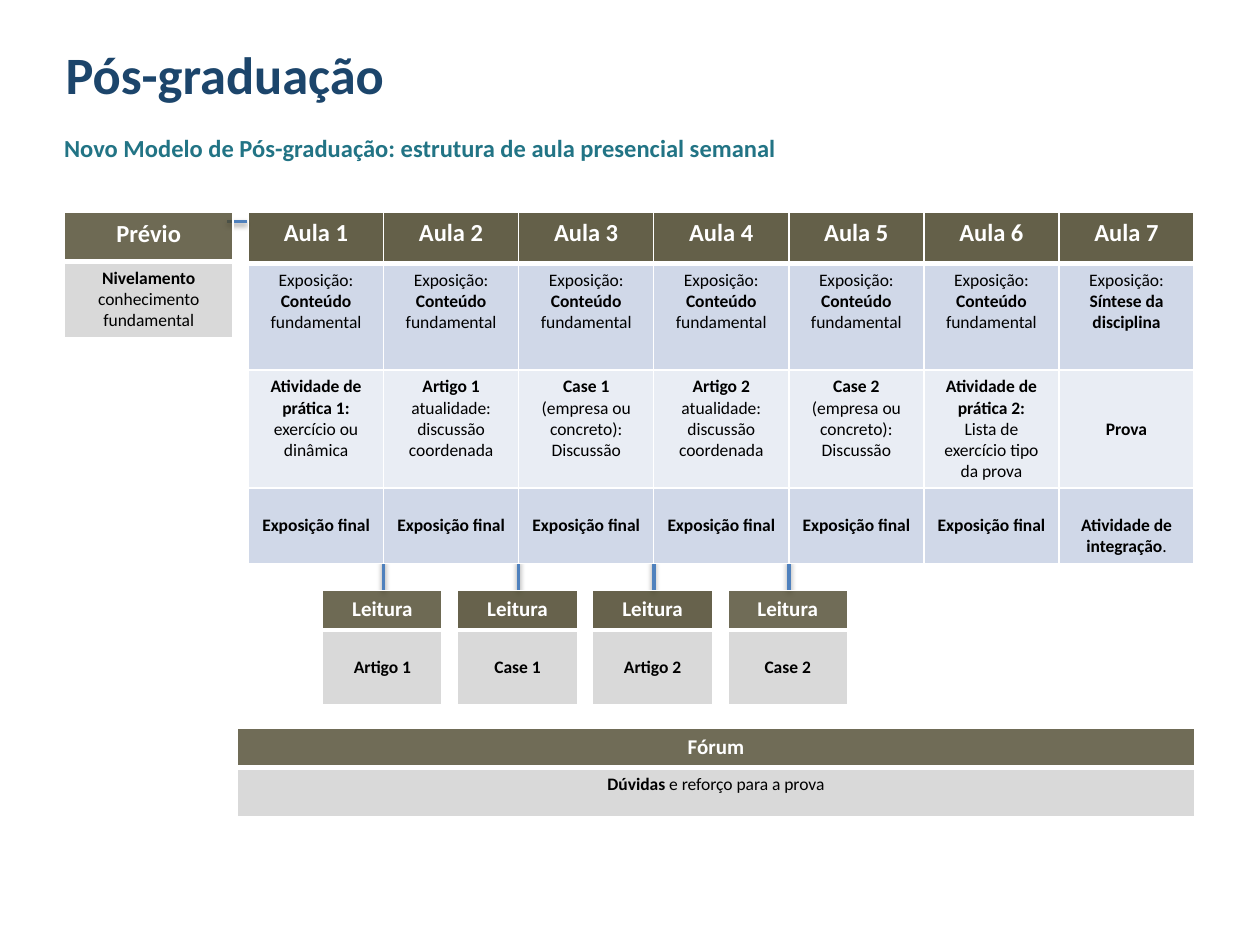
from lxml.etree import SubElement
from pptx import Presentation
from pptx.dml.color import RGBColor
from pptx.enum.shapes import MSO_CONNECTOR
from pptx.enum.text import MSO_ANCHOR, PP_ALIGN
from pptx.oxml import parse_xml
from pptx.oxml.ns import nsdecls, qn
from pptx.util import Pt

FONT = "Calibri"
OLIVE, GREY, WHITE, BLACK = "4A452A", "D9D9D9", "FFFFFF", "000000"
BLUE, PALE_BLUE, LINK_BLUE = "D0D8E8", "E9EDF4", "4F81BD"
TOP, MIDDLE, BOTTOM = MSO_ANCHOR.TOP, MSO_ANCHOR.MIDDLE, MSO_ANCHOR.BOTTOM


def paint(fill, colour):
    fill.solid()
    fill.fore_color.rgb = RGBColor.from_string(colour)


def add_grid(left, top, column_width, header_size, opacity, rows):
    """Add a table whose first row is the translucent header.

    Each row is (height, colour, anchor, cells); a cell's paragraphs are
    split by line breaks and its bold words stand between asterisks.
    """
    columns = len(rows[0][3])
    grid = slide.shapes.add_table(
        len(rows), columns, Pt(left), Pt(top),
        Pt(column_width * columns), Pt(sum(row[0] for row in rows))).table
    grid.first_row = grid.horz_banding = False
    for column in grid.columns:
        column.width = Pt(column_width)
    for r, (height, colour, anchor, texts) in enumerate(rows):
        grid.rows[r].height = Pt(height)
        for c, text in enumerate(texts):
            cell = grid.cell(r, c)
            cell.vertical_anchor = anchor
            paint(cell.fill, colour)
            properties = cell._tc.tcPr
            if r == 0:
                colour_node = properties.find(".//" + qn("a:srgbClr"))
                SubElement(colour_node, qn("a:alpha"), val=str(opacity * 1000))
            for position, side in enumerate("LRTB"):
                thick = (r, side) in ((0, "B"), (1, "T"))
                properties.insert(position, parse_xml(
                    f'<a:ln{side} {nsdecls("a")} w="{Pt(3 if thick else 1)}">'
                    f'<a:solidFill><a:srgbClr val="{WHITE}"/></a:solidFill></a:ln{side}>'))
            for p, line in enumerate(text.split("\n")):
                frame = cell.text_frame
                paragraph = frame.add_paragraph() if p else frame.paragraphs[0]
                paragraph.alignment = PP_ALIGN.CENTER
                paragraph.font.name = FONT
                paragraph.font.size = Pt(10 if r else header_size)
                paint(paragraph.font.fill, BLACK if r else WHITE)
                for part, words in enumerate(line.split("*")):
                    if words:
                        run = paragraph.add_run()
                        run.text = words
                        run.font.bold = r == 0 or part % 2 == 1
    return grid


prs = Presentation()
prs.slide_width, prs.slide_height = Pt(720), Pt(540)
slide = prs.slides.add_slide(prs.slide_layouts[5])

# Title and subtitle
title = slide.shapes.title
title.left, title.top, title.width, title.height = Pt(29.5), Pt(20), Pt(198), Pt(44)
subtitle = slide.shapes.add_textbox(Pt(29.5), Pt(72.5), Pt(652), Pt(26))
for box, text, size, colour, alignment, wrap in (
    (title, "Pós-graduação", 30, "1C456B", PP_ALIGN.CENTER, False),
    (subtitle, "Novo Modelo de Pós-graduação: estrutura de aula presencial semanal",
     14, "227485", PP_ALIGN.JUSTIFY, True),
):
    box.text_frame.text = text
    box.text_frame.word_wrap = wrap
    heading = box.text_frame.paragraphs[0]
    heading.alignment = alignment
    heading.font.name, heading.font.size, heading.font.bold = FONT, Pt(size), True
    paint(heading.font.fill, colour)
title.text_frame.vertical_anchor = MIDDLE

# Links between the blocks
lessons_left, lessons_top, lesson_width = 142, 121, 77.2
readings_top = 337.5
links = [(129.6, 126.7, 141.1, 126.7)]
for lesson in range(1, 5):
    x = lessons_left + lesson * lesson_width
    links.append((x, readings_top, x, 320))
for ends in links:
    link = slide.shapes.add_connector(MSO_CONNECTOR.STRAIGHT, *map(Pt, ends))
    paint(link.line.fill, LINK_BLUE)
    link.line.width = Pt(2)
    link._element.spPr.append(parse_xml(
        f'<a:effectLst {nsdecls("a")}><a:outerShdw blurRad="{Pt(3.1)}" dist="{Pt(1.6)}" '
        f'dir="5400000" rotWithShape="0"><a:srgbClr val="{BLACK}"><a:alpha val="38000"/>'
        '</a:srgbClr></a:outerShdw></a:effectLst>'))

# Weekly lessons
case = "*Case {}*\n(empresa ou concreto):\nDiscussão"
lessons = add_grid(lessons_left, lessons_top, lesson_width, 14, 85, [
    (29.5, OLIVE, TOP, [f"Aula {n}" for n in range(1, 8)]),
    (61, BLUE, TOP, ["Exposição:\n*Conteúdo* fundamental"] * 6
     + ["Exposição:\n*Síntese da disciplina*"]),
    (67.5, PALE_BLUE, TOP, [
        "*Atividade de prática 1:*\nexercício ou dinâmica",
        "*Artigo 1 *atualidade:\ndiscussão coordenada",
        case.format(1),
        "*Artigo 2*\natualidade:\ndiscussão coordenada",
        case.format(2),
        "*Atividade de prática 2:*\nLista de exercício tipo da prova",
        "*Prova*",
    ]),
    (43, BLUE, MIDDLE, ["*Exposição final*"] * 6 + ["*Atividade de integração*."]),
])
lessons.cell(2, 6).vertical_anchor = MIDDLE
lessons.cell(3, 6).vertical_anchor = BOTTOM

# Forum and preparation
add_grid(135.5, 416, 547.2, 12, 79, [
    (22.5, OLIVE, TOP, ["Fórum"]),
    (28, GREY, TOP, ["*Dúvidas* e reforço para a prova"]),
])
add_grid(36.7, 121.5, 96.5, 14, 80, [
    (28, OLIVE, TOP, ["Prévio"]),
    (43, GREY, TOP, ["*Nivelamento* conhecimento\nfundamental"]),
])

# Readings between lessons
readings = (("Artigo 1", 80), ("Case 1", 84), ("Artigo 2", 84), ("Case 2", 79))
for n, (reading, opacity) in enumerate(readings):
    add_grid(184.3 + n * lesson_width, readings_top, 68.4, 12, opacity, [
        (22.5, OLIVE, TOP, ["Leitura"]),
        (43, GREY, MIDDLE, [f"*{reading}*"]),
    ])

prs.save("out.pptx")
